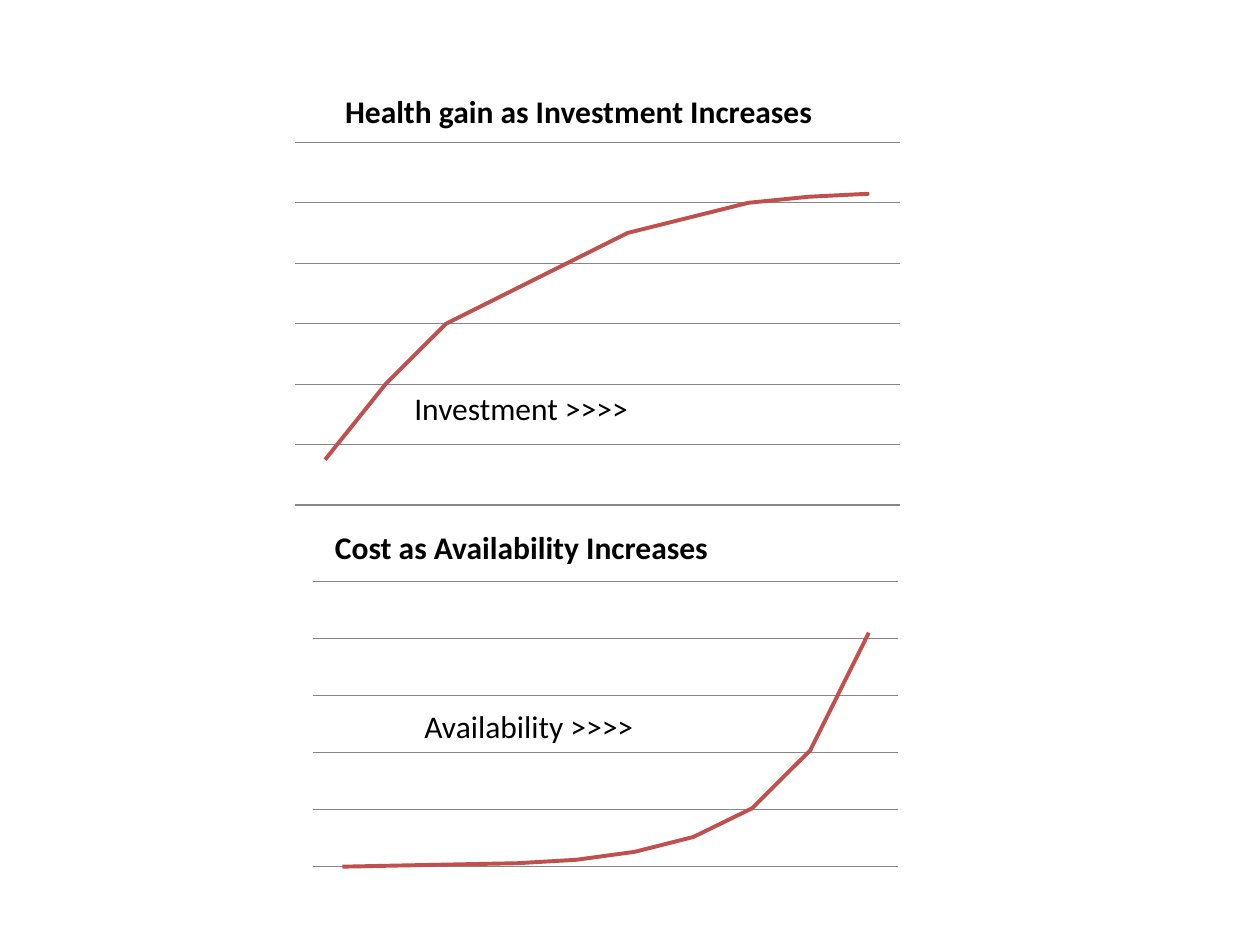
from pptx import Presentation
from pptx.chart.data import CategoryChartData
from pptx.dml.color import RGBColor
from pptx.enum import chart as chart_enum, text
from pptx.oxml import parse_xml
from pptx.oxml.ns import nsdecls, qn
from pptx.util import Inches, Pt

FONT = "Calibri"
BLACK, RED, GREY = "000000", "C0504D", "868686"

# box: left, top, width, height in inches; plot: the same as fractions of the box
CHARTS = [
    {"box": (2.48, 3.91, 6.61, 3), "plot": (0, 0.235, 0.703, 0.755),
     "values": [0, 1, 2, 3, 6, 13, 26, 51, 102, 205],
     "maximum": 250, "step": 50},
    {"box": (2.24, 1.07, 5, 3), "plot": (0.02, 0.02, 0.96, 0.96),
     "values": [15, 40, 60, 70, 80, 90, 95, 100, 102, 103],
     "maximum": 120, "step": 20},
]

# wording, left, top, width, bold
LABELS = [
    ("Health gain as Investment Increases", 2.64, 0.68, 4.49, True),
    ("Cost as Availability Increases", 2.56, 4.14, 4.49, True),
    ("Investment >>>>", 3.19, 3.04, 2.44, False),
    ("Availability >>>>", 3.27, 5.56, 2.44, False),
]


def color(hex_string):
    return RGBColor.from_string(hex_string)


def style_line(line, hex_string, width):
    line.color.rgb = color(hex_string)
    line.width = Pt(width)


def place_plot(chart, fractions):
    """Fix the inner plot area at fractions of the chart's box."""
    plot_area = chart._chartSpace.chart.plotArea
    for old in plot_area.findall(qn("c:layout")):
        plot_area.remove(old)
    modes = '<c:xMode val="edge"/><c:yMode val="edge"/>'
    sizes = "".join(f'<c:{name} val="{value}"/>' for name, value in zip("xywh", fractions))
    plot_area.insert(0, parse_xml(
        f'<c:layout {nsdecls("c")}><c:manualLayout><c:layoutTarget val="inner"/>'
        f"{modes}{sizes}</c:manualLayout></c:layout>"))


def add_line_chart(slide, box, plot, values, maximum, step):
    data = CategoryChartData()
    data.categories = [str(number + 1) for number in range(len(values))]
    data.add_series("Series 1", values)
    chart = slide.shapes.add_chart(
        chart_enum.XL_CHART_TYPE.LINE, *map(Inches, box), data).chart
    chart.has_title = False
    chart.has_legend = False
    chart.font.name, chart.font.size = FONT, Pt(10)
    chart.font.color.rgb = color(BLACK)

    chart.category_axis.visible = False
    axis = chart.value_axis
    axis.visible = False
    axis.minimum_scale, axis.maximum_scale, axis.major_unit = 0, maximum, step
    axis.has_major_gridlines = True
    style_line(axis.major_gridlines.format.line, GREY, 0.75)

    chart.plots[0].vary_by_categories = False
    series = chart.plots[0].series[0]
    series.smooth = False
    series.marker.style = chart_enum.XL_MARKER_STYLE.NONE
    style_line(series.format.line, RED, 2.25)
    place_plot(chart, plot)


def add_label(slide, wording, left, top, width, bold):
    frame = slide.shapes.add_textbox(*map(Inches, (left, top, width, 0.4))).text_frame
    frame.word_wrap = True
    frame.auto_size = text.MSO_AUTO_SIZE.SHAPE_TO_FIT_TEXT
    run = frame.paragraphs[0].add_run()
    run.text = wording
    run.font.name, run.font.size, run.font.bold = FONT, Pt(18), bold
    run.font.color.rgb = color(BLACK)


def main():
    presentation = Presentation()
    presentation.slide_width, presentation.slide_height = Inches(10), Inches(7.5)
    slide = presentation.slides.add_slide(presentation.slide_layouts.get_by_name("Blank"))
    for chart in CHARTS:
        add_line_chart(slide, **chart)
    for label in LABELS:
        add_label(slide, *label)
    presentation.save("out.pptx")


if __name__ == "__main__":
    main()
